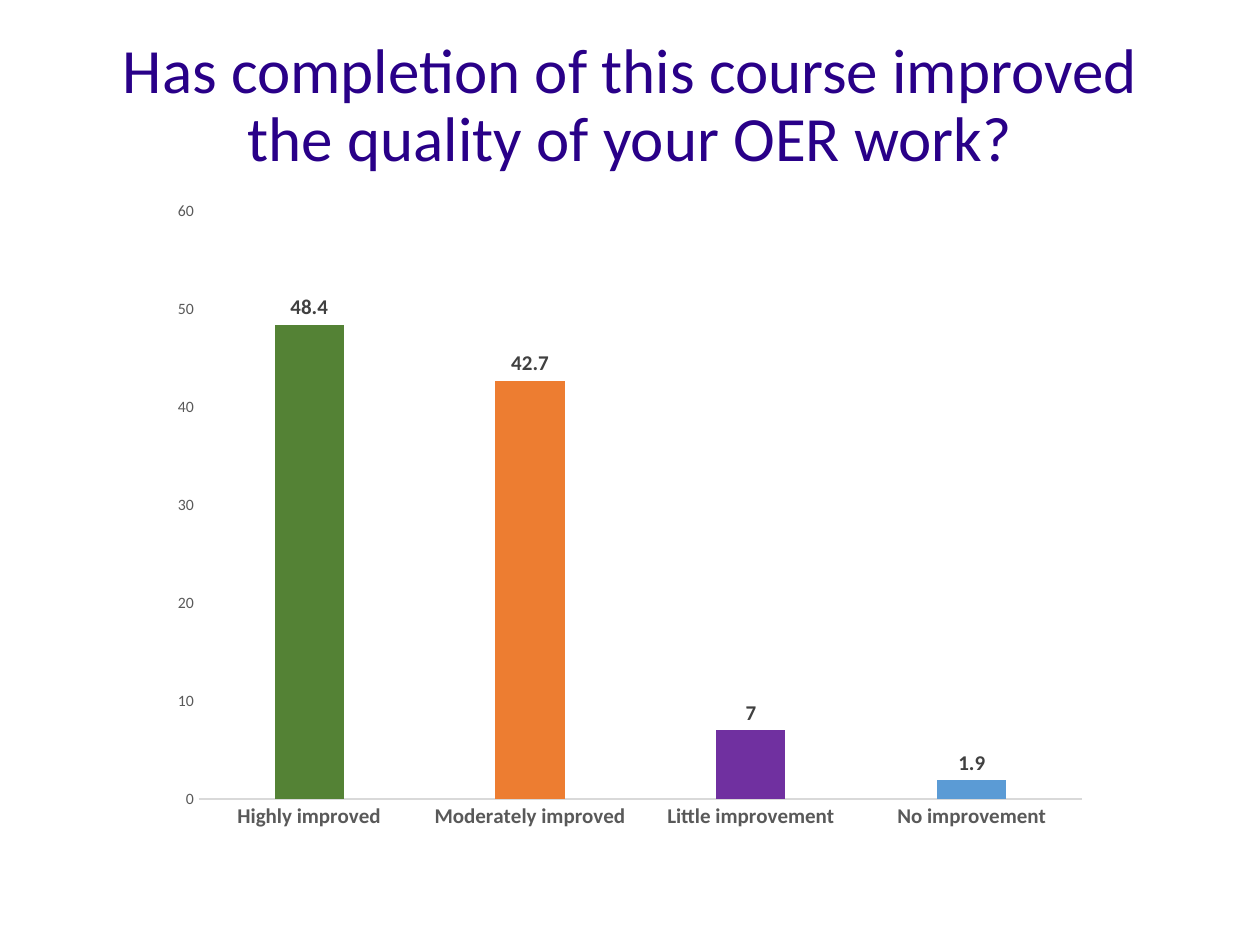
from dataclasses import dataclass

from pptx import Presentation
from pptx.chart.data import CategoryChartData
from pptx.dml.color import RGBColor
from pptx.enum.chart import XL_CHART_TYPE as ChartType
from pptx.enum.chart import XL_LABEL_POSITION as LabelPosition
from pptx.enum.chart import XL_TICK_MARK as TickMark
from pptx.enum.text import MSO_ANCHOR as Anchor
from pptx.enum.text import MSO_AUTO_SIZE as AutoSize
from pptx.enum.text import PP_ALIGN as Align
from pptx.util import Emu, Pt


@dataclass(frozen=True)
class Theme:
    font: str = "Calibri"
    title_color: str = "290088"
    axis_color: str = "595959"
    label_color: str = "404040"
    line_color: str = "D9D9D9"
    title_size: int = 36
    chart_size: int = 10
    label_size: int = 12
    value_size: int = 9


THEME = Theme()
PX_PER_INCH = 126
TITLE = "Has completion of this course improved the quality of your OER work?"
RATINGS = [
    ("Highly improved", 48.4, "548235"),
    ("Moderately improved", 42.7, "ED7D31"),
    ("Little improvement", 7, "7030A0"),
    ("No improvement", 1.9, "5B9BD5"),
]


def px(length):
    return Emu(round(length * 914400 / PX_PER_INCH))


def color(code):
    return RGBColor.from_string(code)


def style_font(font, size, code, bold=False):
    font.name = THEME.font
    font.size = Pt(size)
    font.bold = bold
    font.color.rgb = color(code)


def place_title(page, text, left, top, width, height):
    box = page.shapes.title
    box.left, box.top, box.width, box.height = map(px, (left, top, width, height))
    frame = box.text_frame
    frame.word_wrap = True
    frame.auto_size = AutoSize.NONE
    frame.vertical_anchor = Anchor.MIDDLE
    frame.margin_top, frame.margin_bottom = px(0), px(68)
    para = frame.paragraphs[0]
    para.alignment = Align.CENTER
    para.line_spacing = 0.9
    span = para.add_run()
    span.text = text
    style_font(span.font, THEME.title_size, THEME.title_color)


def style_axes(chart):
    names, values = chart.category_axis, chart.value_axis
    for axis in (names, values):
        axis.has_major_gridlines = False
        axis.major_tick_mark = axis.minor_tick_mark = TickMark.NONE
    style_font(names.tick_labels.font, THEME.label_size, THEME.axis_color, bold=True)
    names.format.line.color.rgb = color(THEME.line_color)
    names.format.line.width = Pt(0.75)
    style_font(values.tick_labels.font, THEME.value_size, THEME.axis_color)
    values.format.line.fill.background()
    values.minimum_scale, values.maximum_scale, values.major_unit = 0, 60, 10


def style_bars(plot, colors):
    plot.gap_width, plot.overlap = 219, -27
    plot.vary_by_categories = False
    series = plot.series[0]
    series.invert_if_negative = False
    series.format.fill.solid()
    series.format.fill.fore_color.rgb = color(colors[-1])
    for index, code in enumerate(colors[:-1]):
        fill = series.points[index].format.fill
        fill.solid()
        fill.fore_color.rgb = color(code)
    labels = series.data_labels
    labels.show_value = True
    labels.position = LabelPosition.OUTSIDE_END
    style_font(labels.font, THEME.label_size, THEME.label_color, bold=True)


def add_rating_chart(page, ratings, left, top, width, height):
    names, values, colors = zip(*ratings)
    data = CategoryChartData()
    data.categories = names
    data.add_series("Series 1", values)
    frame = map(px, (left, top, width, height))
    chart = page.shapes.add_chart(ChartType.COLUMN_CLUSTERED, *frame, data).chart
    chart.has_title = False
    chart.has_legend = False
    style_font(chart.font, THEME.chart_size, "000000")
    style_axes(chart)
    style_bars(chart.plots[0], colors)


def main():
    deck = Presentation()
    deck.slide_width, deck.slide_height = px(1260), px(945)
    page = deck.slides.add_slide(deck.slide_layouts.get_by_name("Title Only"))
    place_title(page, TITLE, 87, 50, 1086, 183)
    add_rating_chart(page, RATINGS, 159, 189, 942, 653)
    deck.save("out.pptx")


if __name__ == "__main__":
    main()
